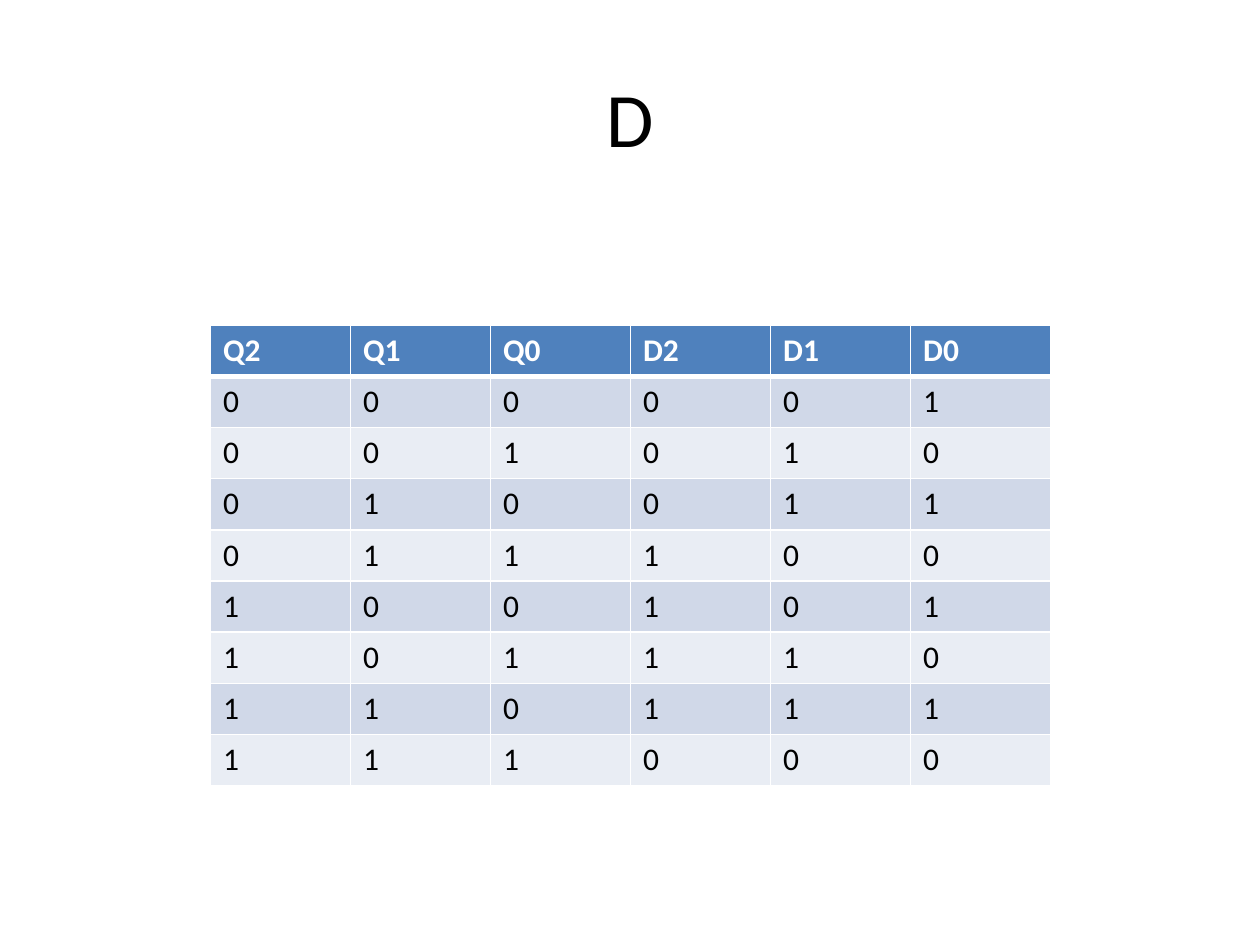
"""Build a slide with a truth table for a three-bit counter made of D flip-flops."""
from dataclasses import dataclass

from lxml.etree import SubElement
from pptx import Presentation
from pptx.dml.color import RGBColor
from pptx.enum.text import MSO_ANCHOR, PP_ALIGN
from pptx.oxml.ns import qn
from pptx.util import Inches, Pt

TITLE = "D"
HEADINGS = ["Q2", "Q1", "Q0", "D2", "D1", "D0"]
STATES = [
    "000001",
    "001010",
    "010011",
    "011100",
    "100101",
    "101110",
    "110111",
    "111000",
]


@dataclass(frozen=True)
class Theme:
    font: str = "Calibri"
    title_size: int = 44
    cell_size: int = 18
    ink: str = "000000"
    paper: str = "FFFFFF"
    heading: str = "4F81BD"
    bands: tuple = ("D0D8E8", "E9EDF4")
    rule: int = 1
    heading_rule: int = 3


THEME = Theme()
TITLE_BOX = (0.5, 0.3, 9, 1.25)
TABLE_BOX = (1.67, 2.58, 6.67, 3.66)


def write(frame, text, *, size, color=THEME.ink, bold=False, align=PP_ALIGN.LEFT):
    paragraph = frame.paragraphs[0]
    paragraph.alignment = align
    run = paragraph.add_run()
    run.text = text
    run.font.name = THEME.font
    run.font.size = Pt(size)
    run.font.bold = bold
    run.font.color.rgb = RGBColor.from_string(color)


def add_borders(cell, **widths):
    properties = cell._tc.get_or_add_tcPr()
    for side in "LRTB":
        width = Pt(widths.get(side, THEME.rule))
        border = SubElement(properties, qn(f"a:ln{side}"), w=str(width))
        fill = SubElement(border, qn("a:solidFill"))
        SubElement(fill, qn("a:srgbClr"), val=THEME.paper)


def add_title(slide):
    title = slide.shapes.title
    title.left, title.top, title.width, title.height = map(Inches, TITLE_BOX)
    title.text_frame.vertical_anchor = MSO_ANCHOR.MIDDLE
    write(title.text_frame, TITLE, size=THEME.title_size, align=PP_ALIGN.CENTER)


def add_truth_table(slide):
    rows = [HEADINGS, *STATES]
    table = slide.shapes.add_table(
        len(rows), len(HEADINGS), *map(Inches, TABLE_BOX)
    ).table
    for r, values in enumerate(rows):
        if r == 0:
            fill, color, widths = THEME.heading, THEME.paper, {"B": THEME.heading_rule}
        else:
            fill, color = THEME.bands[(r - 1) % 2], THEME.ink
            widths = {"T": THEME.heading_rule} if r == 1 else {}
        for c, value in enumerate(values):
            cell = table.cell(r, c)
            add_borders(cell, **widths)
            cell.fill.solid()
            cell.fill.fore_color.rgb = RGBColor.from_string(fill)
            write(cell.text_frame, value, size=THEME.cell_size, color=color, bold=r == 0)


def main():
    deck = Presentation()
    deck.slide_width, deck.slide_height = Inches(10), Inches(7.5)
    slide = deck.slides.add_slide(deck.slide_layouts[5])
    add_title(slide)
    add_truth_table(slide)
    deck.save("out.pptx")


if __name__ == "__main__":
    main()
